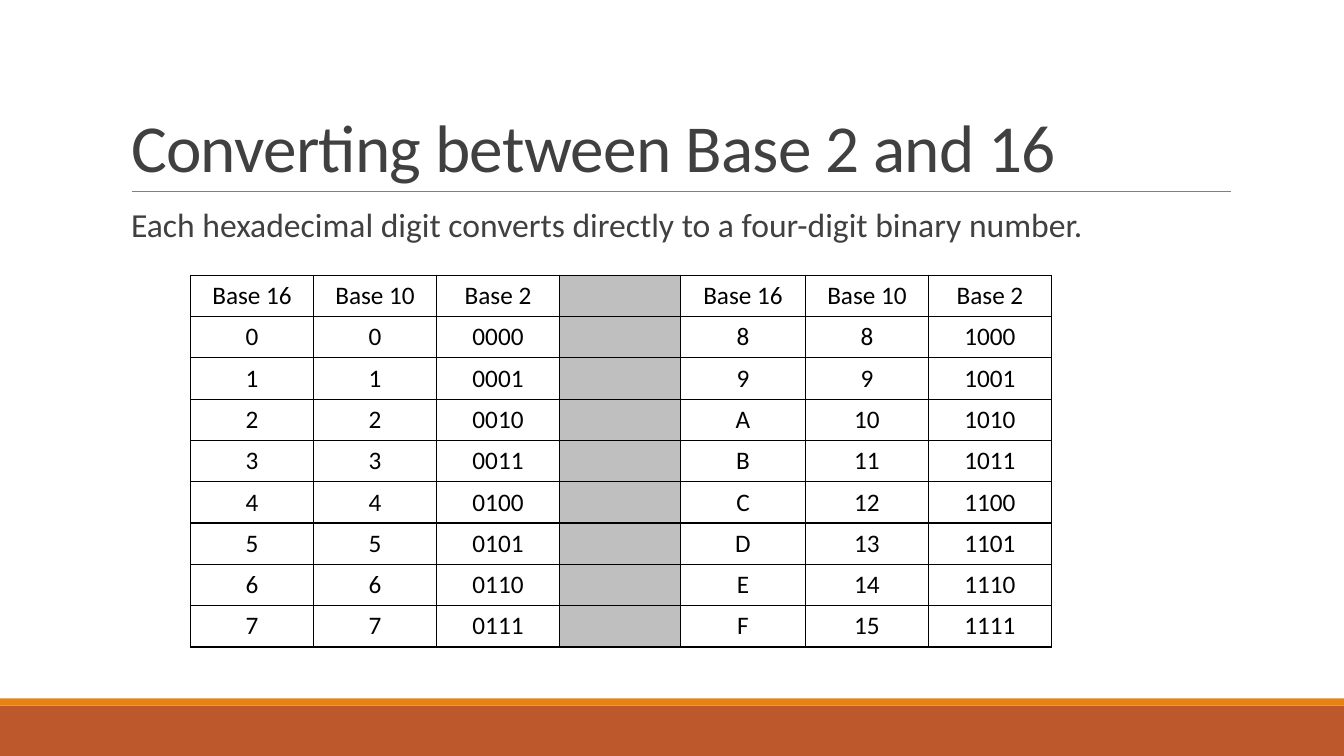
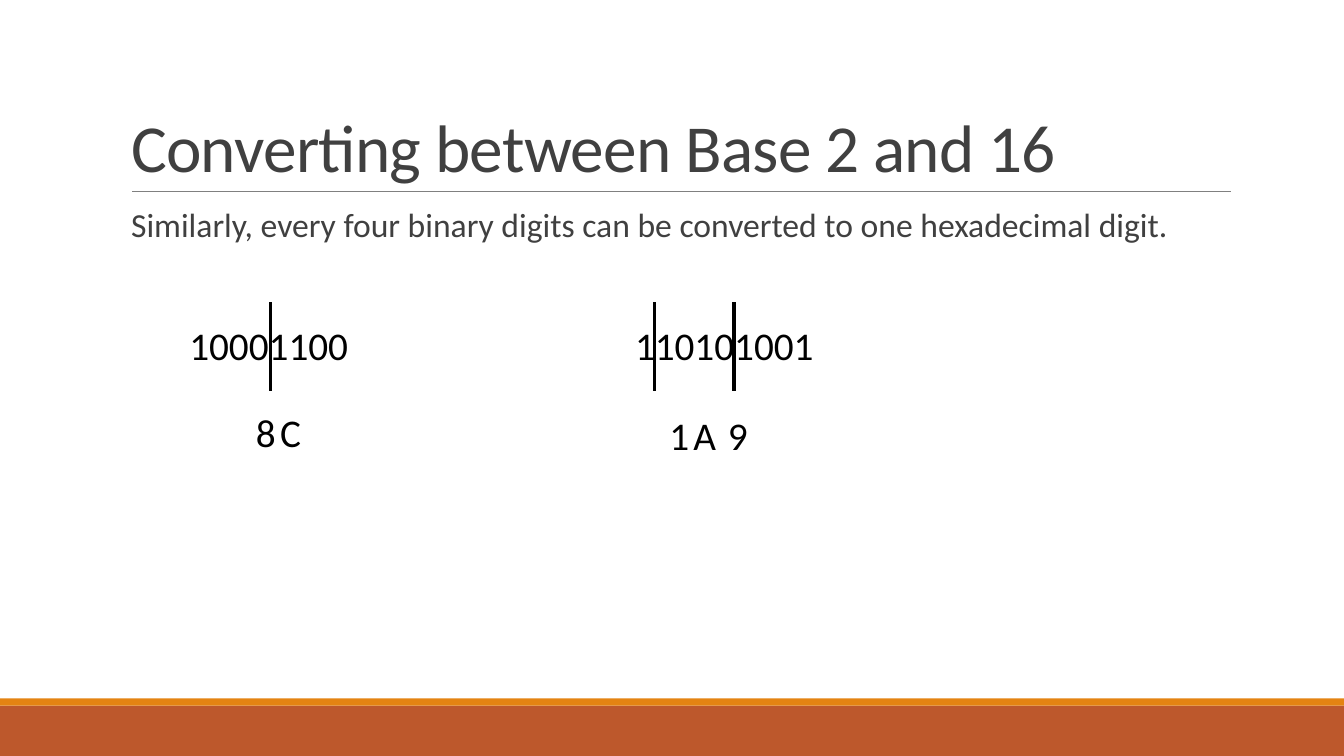
from dataclasses import dataclass

from lxml.etree import SubElement
from pptx import Presentation
from pptx.dml.color import RGBColor
from pptx.enum.shapes import MSO_CONNECTOR, MSO_SHAPE
from pptx.enum.text import MSO_ANCHOR, MSO_AUTO_SIZE, PP_ALIGN
from pptx.oxml.ns import qn
from pptx.slide import Slide
from pptx.table import _Cell
from pptx.text.text import _Paragraph, _Run
from pptx.util import Inches, Pt

FONT = "Calibri"
TITLE = "Converting between Base 2 and 16"
COLORS = {
    "band": "BD582C",
    "stripe": "E48312",
    "rule": "808080",
    "text": "404040",
    "ink": "000000",
    "gap": "BFBFBF",
}
HEADS = ["Base 16", "Base 10", "Base 2"]
WIDTHS = [1.22, 1.22, 1.22, 1.2, 1.24, 1.22, 1.22]
ROW = 0.41


@dataclass
class Label:
    text: str
    left: float
    top: float
    width: float
    wrap: bool = False


@dataclass
class Sample:
    """A binary number, the cuts between its groups, and its hex digits."""
    number: Label
    cuts: list[float]
    digits: list[Label]


SAMPLES = [
    Sample(
        Label("10001100", 1.78, 3.14, 1.8),
        [2.68],
        [Label("8", 2.44, 4, 0.4), Label("C", 2.68, 4, 0.34, True)],
    ),
    Sample(
        Label("110101001", 6.2, 3.14, 2),
        [6.49, 7.28],
        [
            Label("1", 6.54, 4.03, 0.4),
            Label("A", 6.78, 4.03, 0.34, True),
            Label("9", 7.12, 4.03, 0.4),
        ],
    ),
]


def color(name: str) -> RGBColor:
    return RGBColor.from_string(COLORS[name])


def add_run(para: _Paragraph, text: str, size: float, tint: str = "ink") -> _Run:
    run = para.add_run()
    run.text = text
    run.font.name = FONT
    run.font.size = Pt(size)
    run.font.color.rgb = color(tint)
    return run


def add_bar(slide: Slide, top: float, height: float, tint: str) -> None:
    bar = slide.shapes.add_shape(
        MSO_SHAPE.RECTANGLE, 0, Inches(top), Inches(13.33), Inches(height)
    )
    bar.shadow.inherit = False
    bar.fill.solid()
    bar.fill.fore_color.rgb = color(tint)
    bar.line.fill.background()


def add_line(
    slide: Slide, start: tuple[float, float], end: tuple[float, float],
    tint: str, width: float,
) -> None:
    line = slide.shapes.add_connector(
        MSO_CONNECTOR.STRAIGHT, *map(Inches, start), *map(Inches, end)
    )
    line.line.color.rgb = color(tint)
    line.line.width = Pt(width)
    SubElement(line._element.spPr, qn("a:effectLst"))


def set_title(slide: Slide) -> None:
    title = slide.shapes.title
    title.left, title.top = Inches(1.2), Inches(0.31)
    title.width, title.height = Inches(11), Inches(1.59)
    frame = title.text_frame
    frame.auto_size = MSO_AUTO_SIZE.NONE
    frame.vertical_anchor = MSO_ANCHOR.BOTTOM
    para = frame.paragraphs[0]
    para.alignment = PP_ALIGN.LEFT
    para.line_spacing = 0.85
    run = add_run(para, TITLE, 48, "text")
    run.font._element.set("spc", "-50")


def set_body(slide: Slide, text: str) -> None:
    body = slide.placeholders[1]
    body.left, body.top = Inches(1.2), Inches(2.02)
    body.width, body.height = Inches(11), Inches(4.4)
    frame = body.text_frame
    frame.auto_size = MSO_AUTO_SIZE.NONE
    frame.margin_left = frame.margin_right = 0
    para = frame.paragraphs[0]
    para.line_spacing = 0.9
    para.space_before, para.space_after = Pt(12), Pt(2)
    props = para._p.get_or_add_pPr()
    props.set("marL", str(Inches(0.1)))
    props.set("indent", str(-Inches(0.1)))
    tint = SubElement(props, qn("a:buClr"))
    SubElement(tint, qn("a:srgbClr"), val=COLORS["stripe"])
    SubElement(props, qn("a:buChar"), char=" ")
    add_run(para, text, 24, "text")


def add_slide(deck: Presentation, text: str) -> Slide:
    """Add a slide with the shared bands, rule and title."""
    slide = deck.slides.add_slide(deck.slide_layouts[1])
    add_bar(slide, 7, 0.5, "band")
    add_bar(slide, 6.93, 0.07, "stripe")
    add_line(slide, (1.31, 1.9), (12.21, 1.9), "rule", 0.5)
    set_title(slide)
    set_body(slide, text)
    return slide


def set_border(cell: _Cell) -> None:
    props = cell._tc.get_or_add_tcPr()
    for side in ("lnL", "lnR", "lnT", "lnB"):
        line = SubElement(props, qn(f"a:{side}"), w=str(Pt(1)))
        fill = SubElement(line, qn("a:solidFill"))
        SubElement(fill, qn("a:srgbClr"), val=COLORS["ink"])


def set_cell(cell: _Cell, text: str) -> None:
    """Fill a cell; one without text belongs to the grey gap."""
    set_border(cell)
    if not text:
        cell.fill.solid()
        cell.fill.fore_color.rgb = color("gap")
        return
    cell.fill.background()
    cell.vertical_anchor = MSO_ANCHOR.MIDDLE
    para = cell.text_frame.paragraphs[0]
    para.alignment = PP_ALIGN.CENTER
    add_run(para, text, 18)


def bases(num: int) -> list[str]:
    """Write a number in base 16, 10 and 2."""
    return [f"{num:X}", str(num), f"{num:04b}"]


def add_grid(slide: Slide) -> None:
    rows = [HEADS + [""] + HEADS]
    rows += [bases(num) + [""] + bases(num + 8) for num in range(8)]
    grid = slide.shapes.add_table(
        len(rows), len(WIDTHS), Inches(1.89), Inches(2.73),
        Inches(sum(WIDTHS)), Inches(ROW * len(rows)),
    ).table
    grid.first_row = grid.horz_banding = False
    for col, width in zip(grid.columns, WIDTHS):
        col.width = Inches(width)
    for y, row in enumerate(rows):
        grid.rows[y].height = Inches(ROW)
        for x, text in enumerate(row):
            set_cell(grid.cell(y, x), text)


def add_label(slide: Slide, label: Label) -> None:
    box = slide.shapes.add_textbox(
        Inches(label.left), Inches(label.top), Inches(label.width), Inches(0.57)
    )
    frame = box.text_frame
    frame.word_wrap = label.wrap
    frame.auto_size = MSO_AUTO_SIZE.SHAPE_TO_FIT_TEXT
    add_run(frame.paragraphs[0], label.text, 28)


def add_sample(slide: Slide, sample: Sample) -> None:
    for label in [sample.number, *sample.digits]:
        add_label(slide, label)
    for x in sample.cuts:
        add_line(slide, (x, 3), (x, 3.88), "ink", 2.25)


def main() -> None:
    deck = Presentation()
    deck.slide_width, deck.slide_height = Inches(13.33), Inches(7.5)
    slide = add_slide(
        deck,
        "Each hexadecimal digit converts directly to a four-digit binary number.",
    )
    add_grid(slide)
    slide = add_slide(
        deck,
        "Similarly, every four binary digits can be converted to one hexadecimal digit.",
    )
    for sample in SAMPLES:
        add_sample(slide, sample)
    deck.save("out.pptx")


if __name__ == "__main__":
    main()
